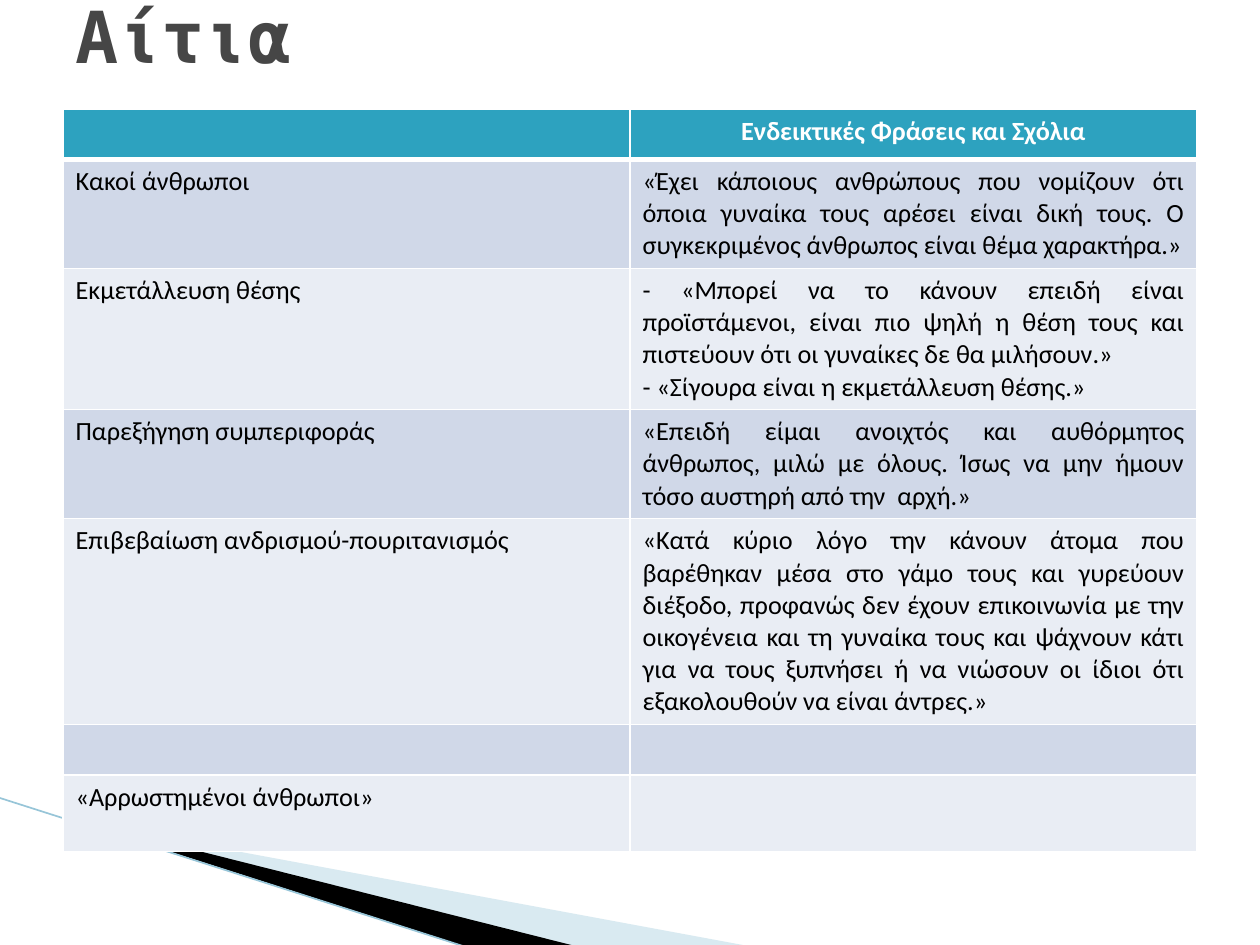
from typing import NamedTuple

from lxml.etree import SubElement
from pptx import Presentation
from pptx.dml.color import RGBColor
from pptx.enum.shapes import MSO_CONNECTOR as Connector
from pptx.enum.text import MSO_ANCHOR as Anchor, PP_ALIGN as Align
from pptx.oxml.ns import qn
from pptx.util import Pt

COLORS = {
    "header": "2DA2BF", "band_dark": "D0D8E8", "band_light": "E9EDF4",
    "white": "FFFFFF", "black": "000000", "title": "464646",
    "pale_wedge": "A0CBDC", "edge": "97C5D8",
}


class Wedge(NamedTuple):
    points: list[tuple[float, float]]
    color: str
    opacity: int = 100


class Cause(NamedTuple):
    label: str
    comments: list[str]
    height: float


WEDGES = [
    Wedge([(39.6, 468.7), (428.4, 540.7), (328.3, 540.7), (39.6, 468)], "pale_wedge", 40),
    Wedge([(38.2, 467.3), (329, 540.7), (267.8, 541.4), (38.9, 468)], "black"),
]
HEADER = Cause("", ["Ενδεικτικές Φράσεις και Σχόλια"], 28.8)
CAUSES = [
    Cause("Κακοί άνθρωποι", [
        "«Έχει κάποιους ανθρώπους που νομίζουν ότι όποια γυναίκα τους αρέσει είναι δική τους. "
        "Ο συγκεκριμένος άνθρωπος είναι θέμα χαρακτήρα.»"], 62.3),
    Cause("Εκμετάλλευση θέσης", [
        "- «Μπορεί να το κάνουν επειδή είναι προϊστάμενοι, είναι πιο ψηλή η θέση τους "
        "και πιστεύουν ότι οι γυναίκες δε θα μιλήσουν.»",
        "- «Σίγουρα είναι η εκμετάλλευση θέσης.»"], 80.7),
    Cause("Παρεξήγηση συμπεριφοράς", [
        "«Επειδή είμαι ανοιχτός και αυθόρμητος άνθρωπος, μιλώ με όλους. "
        "Ίσως να μην ήμουν τόσο αυστηρή από την  αρχή.»"], 62.3),
    Cause("Επιβεβαίωση ανδρισμού-πουριτανισμός", [
        "«Κατά κύριο λόγο την κάνουν άτομα που βαρέθηκαν μέσα στο γάμο τους και γυρεύουν "
        "διέξοδο, προφανώς δεν έχουν επικοινωνία με την οικογένεια και τη γυναίκα τους και "
        "ψάχνουν κάτι για να τους ξυπνήσει ή να νιώσουν οι ίδιοι ότι εξακολουθούν να είναι "
        "άντρες.»"], 117.6),
    Cause("", [""], 28.8),
    Cause("«Αρρωστημένοι άνθρωποι»", [""], 43.8),
]


def rgb(name: str) -> RGBColor:
    """Return the named colour."""
    return RGBColor.from_string(COLORS[name])


def draw_wedge(slide, wedge: Wedge) -> None:
    """Draw one filled corner wedge."""
    start, *rest = [(Pt(x), Pt(y)) for x, y in wedge.points]
    builder = slide.shapes.build_freeform(*start)
    builder.add_line_segments(rest, close=True)
    outline = builder.convert_to_shape()
    outline.shadow.inherit = False
    outline.line.fill.background()
    outline.fill.solid()
    outline.fill.fore_color.rgb = rgb(wedge.color)
    if wedge.opacity < 100:
        color = outline.fill._xPr.find(qn("a:solidFill"))[0]
        SubElement(color, qn("a:alpha"), val=str(wedge.opacity * 1000))


def draw_edge(slide) -> None:
    """Draw the thin line along the wedges."""
    edge = slide.shapes.add_connector(
        Connector.STRAIGHT, Pt(-0.7), Pt(455.8), Pt(267.1), Pt(541.4))
    edge.line.color.rgb = rgb("edge")
    edge.line.width = Pt(0.95)
    SubElement(edge._element.spPr, qn("a:effectLst"))


def fill_cell(cell, texts: list[str], align: Align, fill: str, text_color: str,
              bold: bool, top: float, bottom: float) -> None:
    """Write a table cell with its borders and fill."""
    cell.text = "\n".join(texts)
    for paragraph in cell.text_frame.paragraphs:
        paragraph.alignment = align
        paragraph.font.name = "Calibri"
        paragraph.font.size = Pt(15)
        paragraph.font.bold = bold
        paragraph.font.color.rgb = rgb(text_color)
    properties = cell._tc.get_or_add_tcPr()
    for side, width in (("L", 1), ("R", 1), ("T", top), ("B", bottom)):
        border = SubElement(properties, qn(f"a:ln{side}"), w=str(Pt(width)))
        solid = SubElement(border, qn("a:solidFill"))
        SubElement(solid, qn("a:srgbClr"), val=COLORS["white"])
    cell.fill.solid()
    cell.fill.fore_color.rgb = rgb(fill)


def draw_causes(slide) -> None:
    """Draw the table of causes and comments."""
    rows = [HEADER, *CAUSES]
    table = slide.shapes.add_table(
        len(rows), 2, Pt(36), Pt(62.2), Pt(648), Pt(sum(row.height for row in rows))).table
    for index, cause in enumerate(rows):
        table.rows[index].height = Pt(cause.height)
        is_header = index == 0
        band = "header" if is_header else "band_dark" if index % 2 else "band_light"
        style = (band, "white" if is_header else "black", is_header,
                 3 if index == 1 else 1, 3 if is_header else 1)
        fill_cell(table.cell(index, 0), [cause.label], Align.LEFT, *style)
        fill_cell(table.cell(index, 1), cause.comments,
                  Align.CENTER if is_header else Align.JUSTIFY, *style)


def draw_title(slide) -> None:
    """Draw the slide heading."""
    frame = slide.shapes.add_textbox(Pt(36), Pt(-25.2), Pt(648), Pt(90)).text_frame
    frame.word_wrap = True
    frame.vertical_anchor = Anchor.MIDDLE
    heading = frame.paragraphs[0]
    heading.text = "Αίτια"
    heading.font.name = "DejaVu Sans Mono"
    heading.font.size = Pt(41)
    heading.font.bold = True
    heading.font.color.rgb = rgb("title")


def main() -> None:
    """Build and save the slide."""
    deck = Presentation()
    deck.slide_width, deck.slide_height = Pt(720), Pt(540)
    slide = deck.slides.add_slide(deck.slide_layouts[6])
    for wedge in WEDGES:
        draw_wedge(slide, wedge)
    draw_edge(slide)
    draw_causes(slide)
    draw_title(slide)
    deck.save("out.pptx")


if __name__ == "__main__":
    main()
